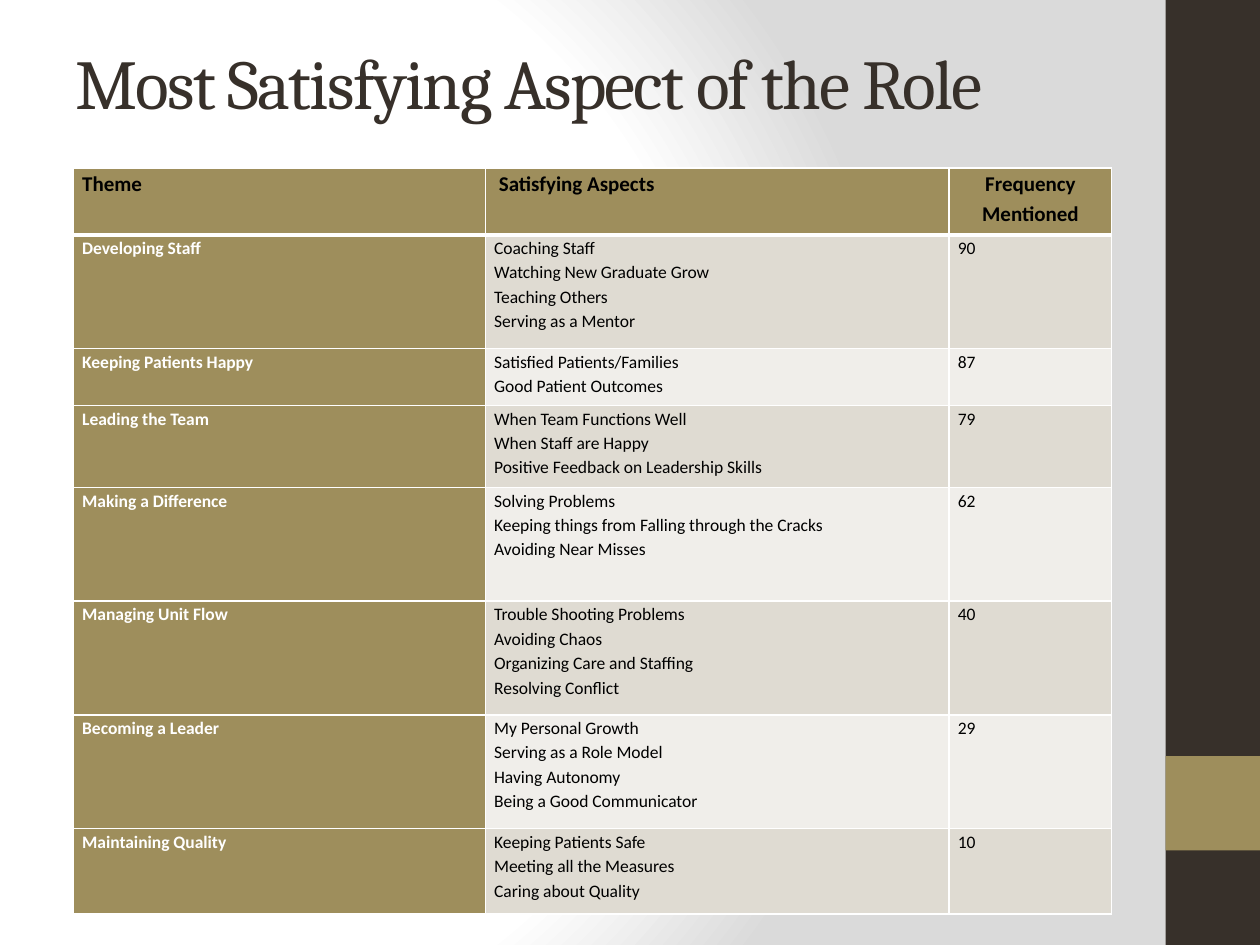
from dataclasses import dataclass

from lxml import etree
from pptx import Presentation
from pptx.dml.color import RGBColor
from pptx.enum.shapes import MSO_SHAPE
from pptx.enum.text import MSO_ANCHOR, PP_ALIGN
from pptx.oxml import parse_xml
from pptx.oxml.ns import nsdecls, qn
from pptx.util import Pt

RECT = MSO_SHAPE.RECTANGLE
MIDDLE = MSO_ANCHOR.MIDDLE
LEFT, CENTER = PP_ALIGN.LEFT, PP_ALIGN.CENTER


@dataclass(frozen=True)
class Theme:
    dark: str = "37302A"
    accent: str = "9E8E5C"
    bands: tuple = ("DFDBD2", "F0EEEA")
    white: str = "FFFFFF"
    black: str = "000000"
    shade: str = "DADADA"
    title_font: str = "Cambria"
    body_font: str = "Calibri"
    title_size: int = 40
    head_size: int = 12
    body_size: int = 10


HEADERS = ["Theme", " Satisfying Aspects", "Frequency Mentioned"]
THEMES = [
    ("Developing Staff",
     ["Coaching Staff", "Watching New Graduate Grow", "Teaching Others",
      "Serving as a Mentor"], 90),
    ("Keeping Patients Happy",
     ["Satisfied Patients/Families", "Good Patient Outcomes"], 87),
    ("Leading the Team",
     ["When Team Functions Well", "When Staff are Happy",
      "Positive Feedback on Leadership Skills"], 79),
    ("Making a Difference",
     ["Solving Problems", "Keeping things from Falling through the Cracks",
      "Avoiding Near Misses"], 62),
    ("Managing Unit Flow",
     ["Trouble Shooting Problems", "Avoiding Chaos",
      "Organizing Care and Staffing", "Resolving Conflict"], 40),
    ("Becoming a Leader",
     ["My Personal Growth", "Serving as a Role Model", "Having Autonomy",
      "Being a Good Communicator"], 29),
    ("Maintaining Quality",
     ["Keeping Patients Safe", "Meeting all the Measures",
      "Caring about Quality"], 10),
]
COLUMN_WIDTHS = [235.4, 265, 92.9]
ROW_HEIGHTS = [38.2, 65, 32.5, 46.8, 65, 65, 65, 48.7]


class Deck:
    def __init__(self, theme):
        self.theme = theme
        self.prs = Presentation()
        self.prs.slide_width, self.prs.slide_height = Pt(720), Pt(540)
        self.slide = self.prs.slides.add_slide(self.prs.slide_layouts[6])

    def background(self):
        t = self.theme
        stops = "".join(
            f'<a:gs pos="{pos * 1000}"><a:srgbClr val="{color}"/></a:gs>'
            for pos, color in [(0, t.white), (75, t.white), (100, t.shade)])
        fill = self.slide.background.fill
        fill.solid()
        bg_pr = self.slide.element.cSld.find(qn("p:bg")).find(qn("p:bgPr"))
        bg_pr.replace(bg_pr[0], parse_xml(
            f'<a:gradFill {nsdecls("a")} rotWithShape="1">'
            f'<a:gsLst>{stops}</a:gsLst><a:path path="circle">'
            '<a:fillToRect l="20000" t="50000" r="100000" b="50000"/>'
            '</a:path></a:gradFill>'))

    def bar(self, x, y, w, h, color):
        s = self.slide.shapes.add_shape(RECT, Pt(x), Pt(y), Pt(w), Pt(h))
        s.shadow.inherit = False
        s.fill.solid()
        s.fill.fore_color.rgb = RGBColor.from_string(color)
        s.line.fill.background()

    def style(self, p, font, size, color, bold=False):
        p.font.name = font
        p.font.size = Pt(size)
        p.font.bold = bold
        p.font.color.rgb = RGBColor.from_string(color)

    def title(self, text, x, y, w, h):
        t = self.theme
        tf = self.slide.shapes.add_textbox(Pt(x), Pt(y), Pt(w), Pt(h)).text_frame
        tf.word_wrap = True
        tf.vertical_anchor = MIDDLE
        p = tf.paragraphs[0]
        r = p.add_run()
        r.text = text
        r.font._element.set("spc", "-100")
        self.style(p, t.title_font, t.title_size, t.dark)

    def border(self, cell, side, width):
        tc_pr = cell._tc.get_or_add_tcPr()
        ln = etree.SubElement(tc_pr, qn(f"a:ln{side}"), w=str(Pt(width)))
        fill = etree.SubElement(ln, qn("a:solidFill"))
        etree.SubElement(fill, qn("a:srgbClr"), val=self.theme.white)

    def cell(self, cell, lines, fill, size, color, bold, align, top, bottom):
        cell.margin_left = cell.margin_right = Pt(5)
        cell.margin_top = cell.margin_bottom = 0
        for side, width in [("L", 1), ("R", 1), ("T", top), ("B", bottom)]:
            self.border(cell, side, width)
        cell.fill.solid()
        cell.fill.fore_color.rgb = RGBColor.from_string(fill)
        cell.text_frame.text = "\n".join(lines)
        for p in cell.text_frame.paragraphs:
            p.line_spacing = 1.15
            p.alignment = align
            self.style(p, self.theme.body_font, size, color, bold)

    def table(self, x, y, widths, heights, headers, rows):
        t = self.theme
        table = self.slide.shapes.add_table(
            len(heights), len(widths), Pt(x), Pt(y),
            Pt(sum(widths)), Pt(sum(heights))).table
        for column, width in zip(table.columns, widths):
            column.width = Pt(width)
        for row, height in zip(table.rows, heights):
            row.height = Pt(height)
        for j, text in enumerate(headers):
            align = CENTER if j == 2 else LEFT
            self.cell(table.cell(0, j), [text], t.accent, t.head_size,
                      t.black, True, align, 1, 3)
        for i, (name, aspects, count) in enumerate(rows, 1):
            band = t.bands[(i - 1) % 2]
            top = 3 if i == 1 else 1
            for j, lines in enumerate([[name], aspects, [str(count)]]):
                first = j == 0
                self.cell(table.cell(i, j), lines, t.accent if first else band,
                          t.body_size, t.white if first else t.black,
                          first, LEFT, top, 1)


def main():
    theme = Theme()
    deck = Deck(theme)
    deck.background()
    deck.bar(666, 0, 54, 540, theme.dark)
    deck.bar(666, 432, 54, 54, theme.accent)
    deck.title("Most Satisfying Aspect of the Role", 36, -18, 600, 129.6)
    deck.table(42, 96, COLUMN_WIDTHS, ROW_HEIGHTS, HEADERS, THEMES)
    deck.prs.save("out.pptx")


if __name__ == "__main__":
    main()
